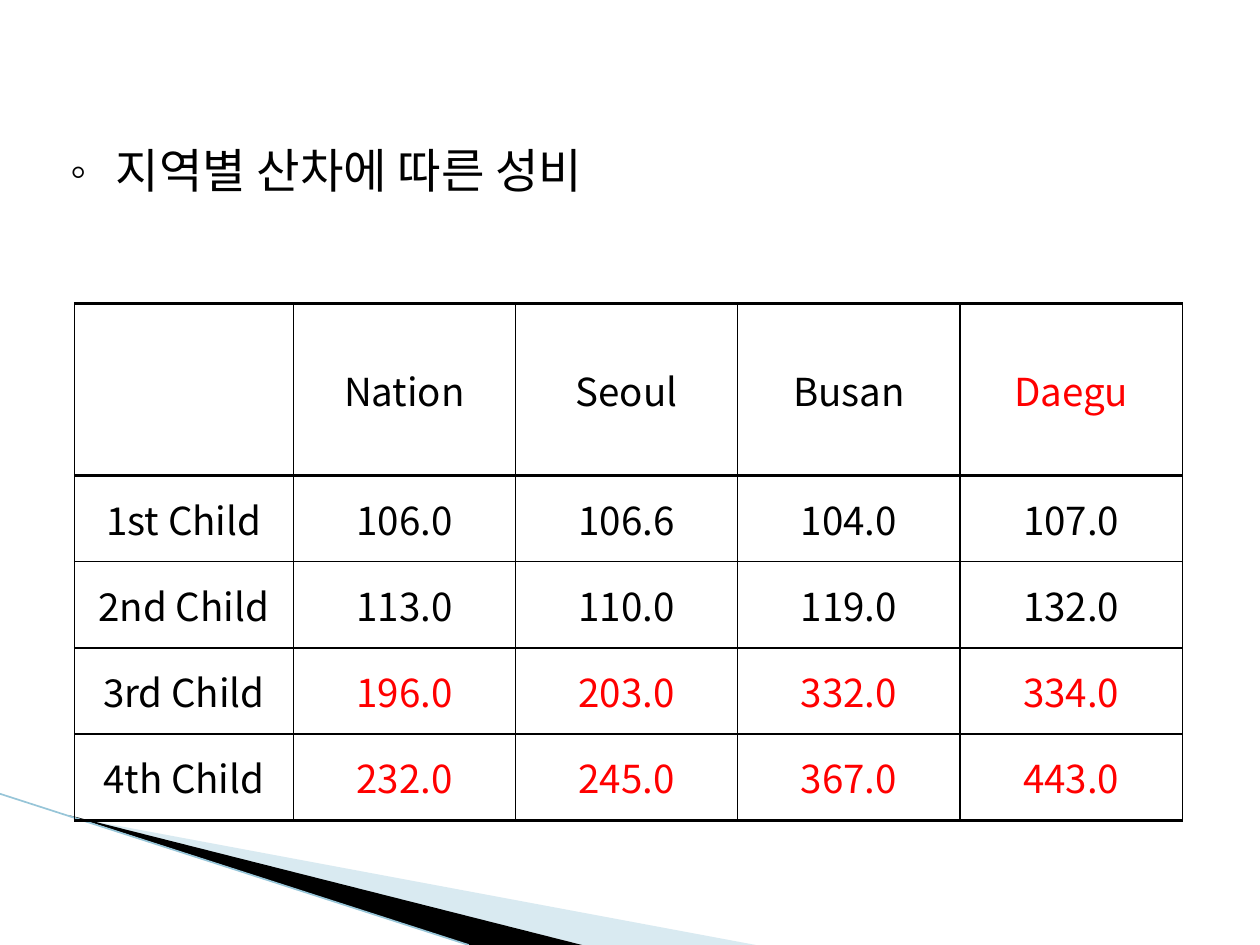
from lxml import etree
from pptx import Presentation, util as u
from pptx.dml.color import RGBColor
from pptx.enum import shapes, text
from pptx.oxml import ns

WIDTH, HEIGHT = u.Inches(10), u.Inches(7.5)
FONT = "Noto Sans CJK KR"
BLACK, RED = "000000", "FF0000"
THIN, THICK = 0.75, 2
HEADERS = ["", "Nation", "Seoul", "Busan", "Daegu"]
RATIOS = [
    ["1st Child", "106.0", "106.6", "104.0", "107.0"],
    ["2nd Child", "113.0", "110.0", "119.0", "132.0"],
    ["3rd Child", "196.0", "203.0", "332.0", "334.0"],
    ["4th Child", "232.0", "245.0", "367.0", "443.0"],
]


def color(value):
    """Turn a hex string into a colour."""
    return RGBColor.from_string(value)


def add_element(parent, tag, **attributes):
    """Append a drawing element with the given attributes."""
    return etree.SubElement(parent, ns.qn(f"a:{tag}"), attributes)


def set_font(paragraph, size, value):
    """Set Latin and East Asian faces, size and colour on a paragraph."""
    font = paragraph.font
    font.name, font.size, font.color.rgb = FONT, u.Pt(size), color(value)
    for run in paragraph.runs:
        add_element(run._r.get_or_add_rPr(), "ea", typeface=FONT)


def add_wedge(slide, box, points, value, alpha=100):
    """Draw a filled outline whose points are shares of the box."""
    left, top, width, height = box
    corners = [(int(left + x * width), int(top + y * height)) for x, y in points]
    builder = slide.shapes.build_freeform(*corners[0])
    builder.add_line_segments(corners[1:], close=True)
    wedge = builder.convert_to_shape()
    wedge.shadow.inherit = False
    wedge.line.fill.background()
    wedge.fill.solid()
    wedge.fill.fore_color.rgb = color(value)
    if alpha < 100:
        fill = wedge.fill._xPr.find(ns.qn("a:solidFill"))
        add_element(fill[0], "alpha", val=str(alpha * 1000))


def add_corner(slide, box):
    """Place the two wedges and the slanted line in the bottom corner."""
    left, top, width, height = box
    add_wedge(slide, box, [(0.09, 0.15), (1, 1), (0.77, 1)], "A0CBDC", 40)
    add_wedge(slide, box, [(0.09, 0.14), (0.77, 1), (0.62, 1)], BLACK)
    line = slide.shapes.add_connector(
        shapes.MSO_CONNECTOR.STRAIGHT, left, top, int(left + 0.62 * width), top + height)
    line.line.color.rgb = color("97C5D8")
    line.line.width = u.Pt(0.95)
    add_element(line._element.spPr, "effectLst")


def set_borders(cell, top, bottom):
    """Draw black cell edges with the given top and bottom widths."""
    properties = cell._tc.get_or_add_tcPr()
    edges = [("lnL", THIN), ("lnR", THIN), ("lnT", top), ("lnB", bottom)]
    for index, (tag, points) in enumerate(edges):
        edge = etree.Element(ns.qn(f"a:{tag}"), w=str(u.Pt(points)))
        add_element(add_element(edge, "solidFill"), "srgbClr", val=BLACK)
        properties.insert(index, edge)


def add_ratio_table(slide, box):
    """Place the table of sex ratios, with a header row twice as tall."""
    left, top, width, height = box
    content = [HEADERS] + RATIOS
    last = len(content) - 1
    frame = slide.shapes.add_table(len(content), len(HEADERS), left, top, width, height)
    table = frame.table
    table.first_row = table.horz_banding = False
    for index, column in enumerate(table.columns):
        column.width = int(width * (0.2 if index else 0.197))
    for index, row in enumerate(table.rows):
        row.height = height // 6 * (1 if index else 2)
    for r, values in enumerate(content):
        for c, value in enumerate(values):
            cell = table.cell(r, c)
            cell.text = value
            cell.vertical_anchor = text.MSO_ANCHOR.MIDDLE
            cell.fill.background()
            set_borders(cell, THICK if r < 2 else THIN, THICK if r in (0, last) else THIN)
            paragraph = cell.text_frame.paragraphs[0]
            paragraph.alignment = text.PP_ALIGN.CENTER
            highlighted = value == "Daegu" or (r >= 3 and c > 0)
            set_font(paragraph, 22, RED if highlighted else BLACK)


def add_heading(slide, box):
    """Place the bulleted heading."""
    frame = slide.shapes.add_textbox(*box).text_frame
    frame.word_wrap = True
    paragraph = frame.paragraphs[0]
    paragraph.text = "지역별 산차에 따른 성비"
    properties = paragraph._p.get_or_add_pPr()
    properties.set("marL", str(u.Inches(0.82)))
    properties.set("indent", str(u.Inches(-0.41)))
    add_element(properties, "buFont", typeface="Noto Sans Mono")
    add_element(properties, "buChar", char="◦")
    set_font(paragraph, 27, BLACK)


def share(left, top, width, height):
    """Turn shares of the slide into a box."""
    return int(left * WIDTH), int(top * HEIGHT), int(width * WIDTH), int(height * HEIGHT)


def main():
    """Build and save the slide."""
    presentation = Presentation()
    presentation.slide_width, presentation.slide_height = WIDTH, HEIGHT
    slide = presentation.slides.add_slide(presentation.slide_layouts[6])
    add_corner(slide, share(0, 0.84, 0.6, 0.16))
    add_ratio_table(slide, (u.Inches(0.59), u.Inches(2.41), u.Inches(8.82), u.Inches(4.1)))
    add_heading(slide, (0, u.Inches(1.07), u.Inches(8.67), u.Inches(5.31)))
    presentation.save("out.pptx")


if __name__ == "__main__":
    main()
